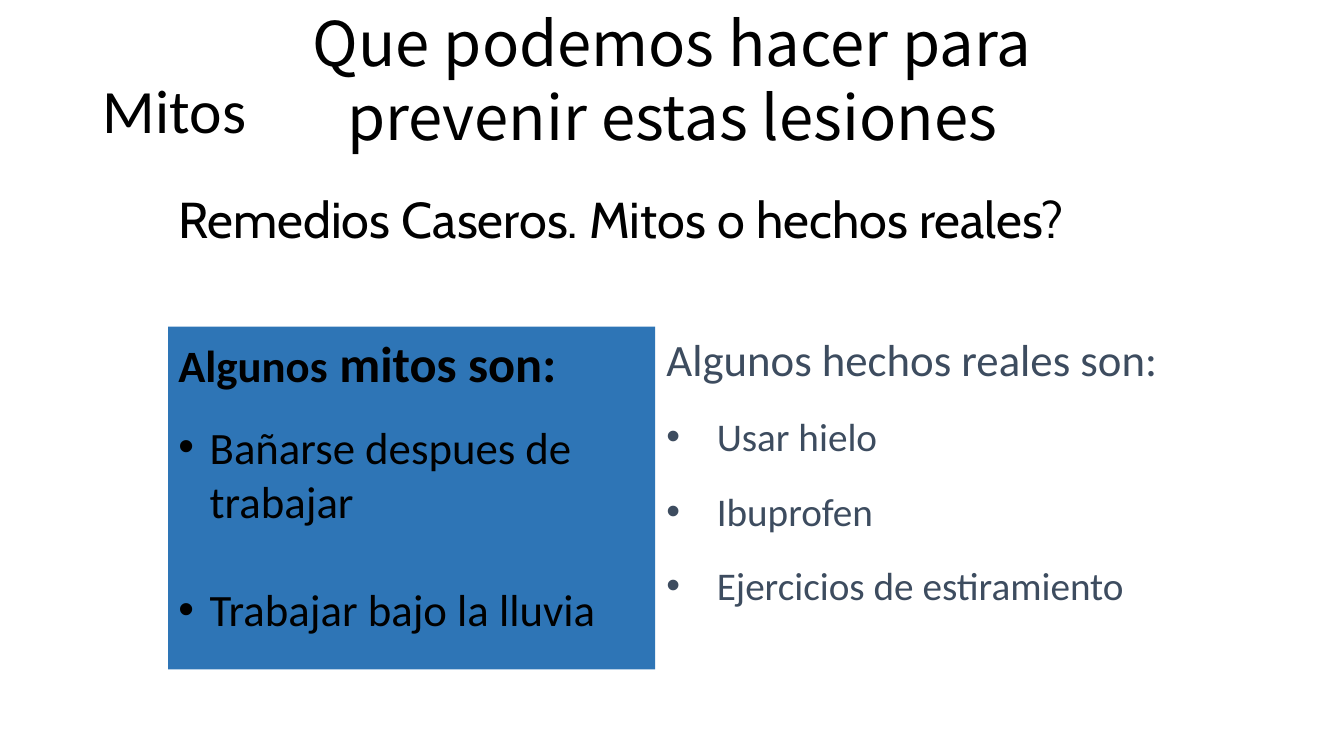
from pptx import Presentation
from pptx.dml.color import RGBColor
from pptx.enum import text as t
from pptx.oxml import parse_xml
from pptx.oxml.ns import nsdecls
from pptx.util import Cm, Pt

BLACK = RGBColor(0x00, 0x00, 0x00)
BLUE = RGBColor(0x2E, 0x75, 0xB6)
SLATE = RGBColor(0x3D, 0x4C, 0x5F)
WHITE = RGBColor(0xFF, 0xFF, 0xFF)

TITLE = ("Mitos", (2.34, 1.02, 29.21, 3.68))
LINES = [
    ("Que podemos hacer para prevenir estas lesiones",
     (4.55, 0, 24.79, 4.01), "Noto Sans CJK SC", 44, t.PP_ALIGN.CENTER),
    ("Remedios Caseros. Mitos o hechos reales?",
     (4.24, 4.62, 25.4, 1.8), "Cabin", 36, t.PP_ALIGN.LEFT),
]
LISTS = [
    dict(box=(4.24, 8.23, 12.27, 8.64), fill=BLUE, ink=BLACK, bold=True,
         head=[("Algunos", 32), (" mitos son:", 36)],
         items=["Bañarse despues de trabajar", "Trabajar bajo la lluvia"],
         size=32, indent=0.79, gaps=[19.5, 39]),
    dict(box=(16.54, 8.23, 13.08, 7.26), fill=WHITE, ink=SLATE, bold=False,
         head=[("Algunos hechos reales son:", 32)],
         items=["Usar hielo", "Ibuprofen", "Ejercicios de estiramiento"],
         size=28, indent=1.27, gaps=[19.5] * 3),
]


def place(shape, box):
    shape.left, shape.top, shape.width, shape.height = map(Cm, box)
    frame = shape.text_frame
    frame.word_wrap = True
    frame.auto_size = t.MSO_AUTO_SIZE.NONE
    return frame


def style(para, face, size, ink, bold=False):
    font = para.font
    font.name, font.size, font.bold = face, Pt(size), bold
    font.color.rgb = ink


def bullet(para, indent, tags):
    props = para._p.get_or_add_pPr()
    props.set("marL", str(Cm(indent)))
    props.set("indent", str(-Cm(indent)))
    for tag in tags:
        props.append(parse_xml(tag.replace(" ", f" {nsdecls('a')} ", 1)))


def fill_list(shape, data):
    frame = place(shape, data["box"])
    frame.vertical_anchor = t.MSO_ANCHOR.TOP
    shape.fill.solid()
    shape.fill.fore_color.rgb = data["fill"]
    head = frame.paragraphs[0]
    head.space_before = Pt(0)
    bullet(head, 0, ["<a:buNone />"])
    base = data["head"][0][1]
    style(head, "Calibri", base, data["ink"], data["bold"])
    for words, size in data["head"]:
        run = head.add_run()
        run.text = words
        if size != base:
            run.font.size = Pt(size)
    for words, gap in zip(data["items"], data["gaps"]):
        para = frame.add_paragraph()
        para.text = words
        para.space_before = Pt(gap)
        bullet(para, data["indent"],
               ['<a:buFont typeface="Arial"/>', '<a:buChar char="•"/>'])
        style(para, "Calibri", data["size"], data["ink"])


def main():
    deck = Presentation()
    deck.slide_width, deck.slide_height = Cm(33.87), Cm(19.05)
    slide = deck.slides.add_slide(deck.slide_layouts[3])
    words, box = TITLE
    frame = place(slide.shapes.title, box)
    frame.text = words
    frame.vertical_anchor = t.MSO_ANCHOR.MIDDLE
    para = frame.paragraphs[0]
    para.alignment, para.line_spacing = t.PP_ALIGN.LEFT, 0.9
    style(para, "Calibri", 44, BLACK)
    for words, box, face, size, align in LINES:
        frame = place(slide.shapes.add_textbox(*map(Cm, box)), box)
        frame.text = words
        para = frame.paragraphs[0]
        para.alignment = align
        style(para, face, size, BLACK)
    for spot, data in zip((1, 2), LISTS):
        fill_list(slide.placeholders[spot], data)
    deck.save("out.pptx")


if __name__ == "__main__":
    main()
